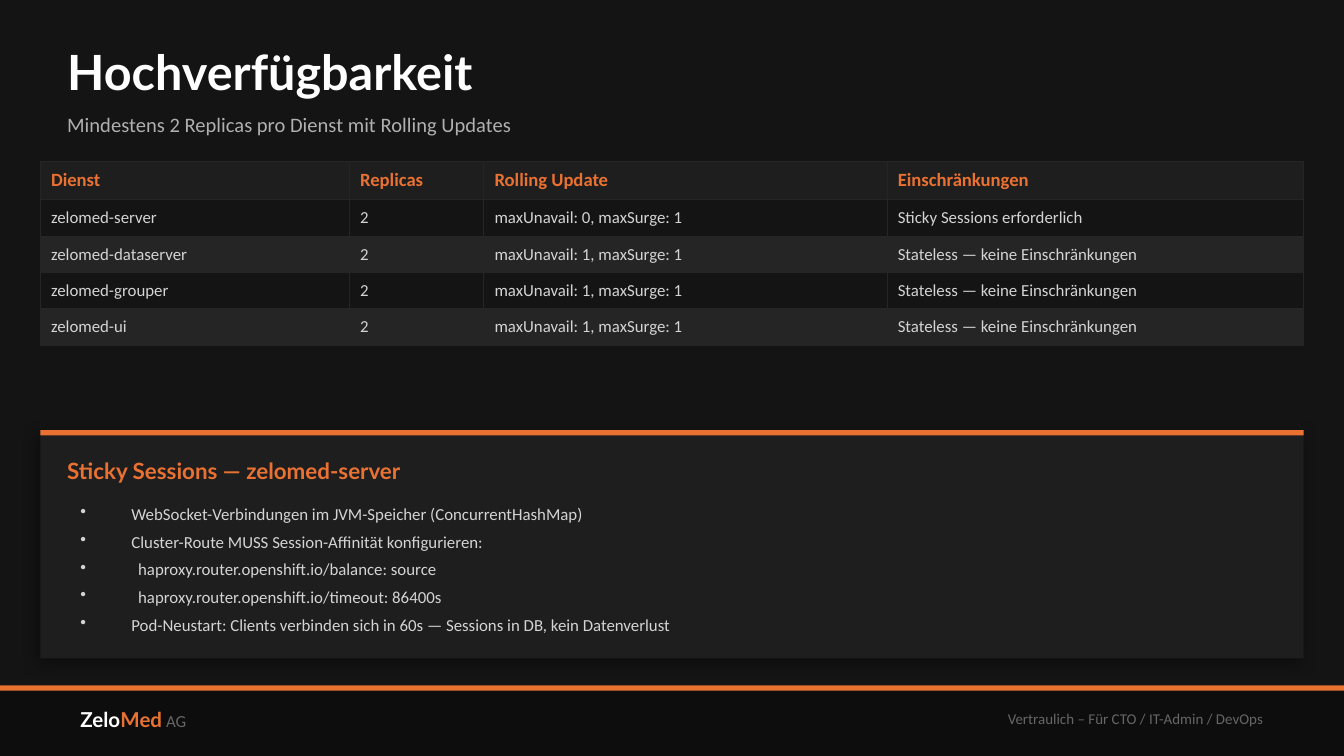
from lxml import etree
from pptx import Presentation
from pptx.dml.color import RGBColor
from pptx.enum.shapes import MSO_SHAPE
from pptx.enum.text import MSO_ANCHOR, PP_ALIGN
from pptx.oxml.ns import qn
from pptx.util import Inches, Pt

BACKGROUND = RGBColor(0x14, 0x14, 0x14)
FOOTER_BLACK = RGBColor(0x0D, 0x0D, 0x0D)
PANEL = RGBColor(0x1E, 0x1E, 0x1E)
BAND = RGBColor(0x25, 0x25, 0x25)
ORANGE = RGBColor(0xE9, 0x71, 0x32)
WHITE = RGBColor(0xFF, 0xFF, 0xFF)
BODY = RGBColor(0xD4, 0xD4, 0xD4)
SUBTLE = RGBColor(0xB0, 0xB0, 0xB0)
MUTED = RGBColor(0x66, 0x66, 0x66)
BLACK = RGBColor(0, 0, 0)

HEADING_FONT = "Lato"
BODY_FONT = "Calibri"
RULE_HEIGHT = 0.04

SERVICES = [
    ("Dienst", "Replicas", "Rolling Update", "Einschränkungen"),
    ("zelomed-server", "2", "maxUnavail: 0, maxSurge: 1", "Sticky Sessions erforderlich"),
    ("zelomed-dataserver", "2", "maxUnavail: 1, maxSurge: 1", "Stateless — keine Einschränkungen"),
    ("zelomed-grouper", "2", "maxUnavail: 1, maxSurge: 1", "Stateless — keine Einschränkungen"),
    ("zelomed-ui", "2", "maxUnavail: 1, maxSurge: 1", "Stateless — keine Einschränkungen"),
]
# Each note has its text and the width of its hanging indent in inches.
SESSION_NOTES = [
    ("WebSocket-Verbindungen im JVM-Speicher (ConcurrentHashMap)", 0.38),
    ("Cluster-Route MUSS Session-Affinität konfigurieren:", 0.38),
    ("haproxy.router.openshift.io/balance: source", 0.43),
    ("haproxy.router.openshift.io/timeout: 86400s", 0.43),
    ("Pod-Neustart: Clients verbinden sich in 60s — Sessions in DB, kein Datenverlust", 0.38),
]


def add_run(paragraph, text, size, color, font=BODY_FONT, bold=False):
    run = paragraph.add_run()
    run.text = text
    run.font.color.rgb = color
    for name, value in {"size": Pt(size), "name": font, "bold": bold}.items():
        setattr(run.font, name, value)


def add_frame(slide, left, top, width, height, inset=True, anchor=MSO_ANCHOR.MIDDLE):
    box = slide.shapes.add_textbox(Inches(left), Inches(top), Inches(width), Inches(height))
    frame = box.text_frame
    frame.word_wrap = True
    frame.vertical_anchor = anchor
    if not inset:
        for side in ("left", "top", "right", "bottom"):
            setattr(frame, f"margin_{side}", 0)
    return frame


def add_bar(slide, left, top, width, height, color):
    bar = slide.shapes.add_shape(
        MSO_SHAPE.RECTANGLE, Inches(left), Inches(top), Inches(width), Inches(height))
    bar.shadow.inherit = False
    bar.fill.solid()
    bar.fill.fore_color.rgb = color
    bar.line.fill.background()
    return bar


def add_color_element(parent, color):
    fill = etree.SubElement(parent, qn("a:solidFill"))
    return etree.SubElement(fill, qn("a:srgbClr"), val=str(color))


def add_soft_shadow(bar):
    effects = bar._element.spPr.find(qn("a:effectLst"))
    shadow = etree.SubElement(
        effects, qn("a:outerShdw"), blurRad=str(Pt(8)), dist=str(Pt(3)),
        dir=str(135 * 60000), algn="bl", rotWithShape="0")
    tint = etree.SubElement(shadow, qn("a:srgbClr"), val=str(BLACK))
    etree.SubElement(tint, qn("a:alpha"), val="35000")


def add_cell_borders(cell):
    """Draw all four edges; they must precede the fill in the cell properties."""
    properties = cell._tc.get_or_add_tcPr()
    for position, edge in enumerate(("a:lnL", "a:lnR", "a:lnT", "a:lnB")):
        line = etree.Element(qn(edge), w=str(Pt(0.5)))
        add_color_element(line, BAND)
        properties.insert(position, line)


def add_bullet(paragraph, indent):
    properties = paragraph._p.get_or_add_pPr()
    properties.set("marL", str(Inches(indent)))
    properties.set("indent", str(-Inches(indent)))
    etree.SubElement(properties, qn("a:buChar"), char="•")


def add_heading(slide, left, top, width):
    title = add_frame(slide, left, top, width, 0.55, inset=False)
    add_run(title.paragraphs[0], "Hochverfügbarkeit", 26, WHITE, HEADING_FONT, True)
    subtitle = add_frame(slide, left, top + 0.5, width, 0.35, inset=False)
    add_run(subtitle.paragraphs[0],
            "Mindestens 2 Replicas pro Dienst mit Rolling Updates", 11, SUBTLE)


def add_service_table(slide, left, top, width):
    table = slide.shapes.add_table(
        len(SERVICES), len(SERVICES[0]),
        Inches(left), Inches(top), Inches(width), Inches(1.31)).table
    table.first_row = table.horz_banding = False
    for column, column_width in zip(table.columns, (2.3, 1, 3, 3.1)):
        column.width = Inches(column_width)
    cell_format = {
        "margin_left": Inches(0.08), "margin_right": Inches(0.08),
        "margin_top": Inches(0.06), "margin_bottom": Inches(0.06),
        "vertical_anchor": MSO_ANCHOR.MIDDLE,
    }
    for r, service in enumerate(SERVICES):
        is_header = r == 0
        table.rows[r].height = Inches(0.27 if is_header else 0.26)
        row_fill = PANEL if is_header else (BACKGROUND if r % 2 else BAND)
        for c, value in enumerate(service):
            cell = table.cell(r, c)
            for name, setting in cell_format.items():
                setattr(cell, name, setting)
            cell.fill.solid()
            cell.fill.fore_color.rgb = row_fill
            add_cell_borders(cell)
            add_run(cell.text_frame.paragraphs[0], value, 10 if is_header else 9,
                    ORANGE if is_header else BODY, bold=is_header)


def add_session_card(slide, left, top, width, height):
    add_soft_shadow(add_bar(slide, left, top, width, height, PANEL))
    add_bar(slide, left, top, width, RULE_HEIGHT, ORANGE)
    inner_left, inner_width = left + 0.2, width - 0.4
    heading = add_frame(slide, inner_left, top + 0.15, inner_width, 0.3, inset=False)
    add_run(heading.paragraphs[0], "Sticky Sessions — zelomed-server",
            12, ORANGE, HEADING_FONT, True)
    notes = add_frame(slide, inner_left, top + 0.5, inner_width, height - 0.6,
                      anchor=MSO_ANCHOR.TOP)
    for i, (note, indent) in enumerate(SESSION_NOTES):
        paragraph = notes.add_paragraph() if i else notes.paragraphs[0]
        add_bullet(paragraph, indent)
        paragraph.space_after = Pt(4)
        add_run(paragraph, note, 9, BODY)


def add_footer(slide, left, top, width, height):
    add_bar(slide, left, top, width, height, FOOTER_BLACK)
    add_bar(slide, left, top, width, RULE_HEIGHT, ORANGE)
    company = add_frame(slide, left + 0.5, top + 0.05, 3, 0.4).paragraphs[0]
    add_run(company, "Zelo", 11, WHITE, HEADING_FONT, True)
    add_run(company, "Med", 11, ORANGE, HEADING_FONT, True)
    add_run(company, " AG", 9, MUTED)
    audience = add_frame(slide, left + width - 4.5, top + 0.05, 4, 0.4).paragraphs[0]
    audience.alignment = PP_ALIGN.RIGHT
    add_run(audience, "Vertraulich – Für CTO / IT-Admin / DevOps", 8, MUTED)


def main():
    deck = Presentation()
    deck.slide_width, deck.slide_height = Inches(10), Inches(5.625)
    slide = deck.slides.add_slide(deck.slide_layouts[6])
    slide.background.fill.solid()
    slide.background.fill.fore_color.rgb = BACKGROUND
    add_footer(slide, 0, 5.1, 10, 0.53)
    add_heading(slide, 0.5, 0.25, 9)
    add_service_table(slide, 0.3, 1.2, 9.4)
    add_session_card(slide, 0.3, 3.2, 9.4, 1.7)
    deck.save("out.pptx")


if __name__ == "__main__":
    main()
